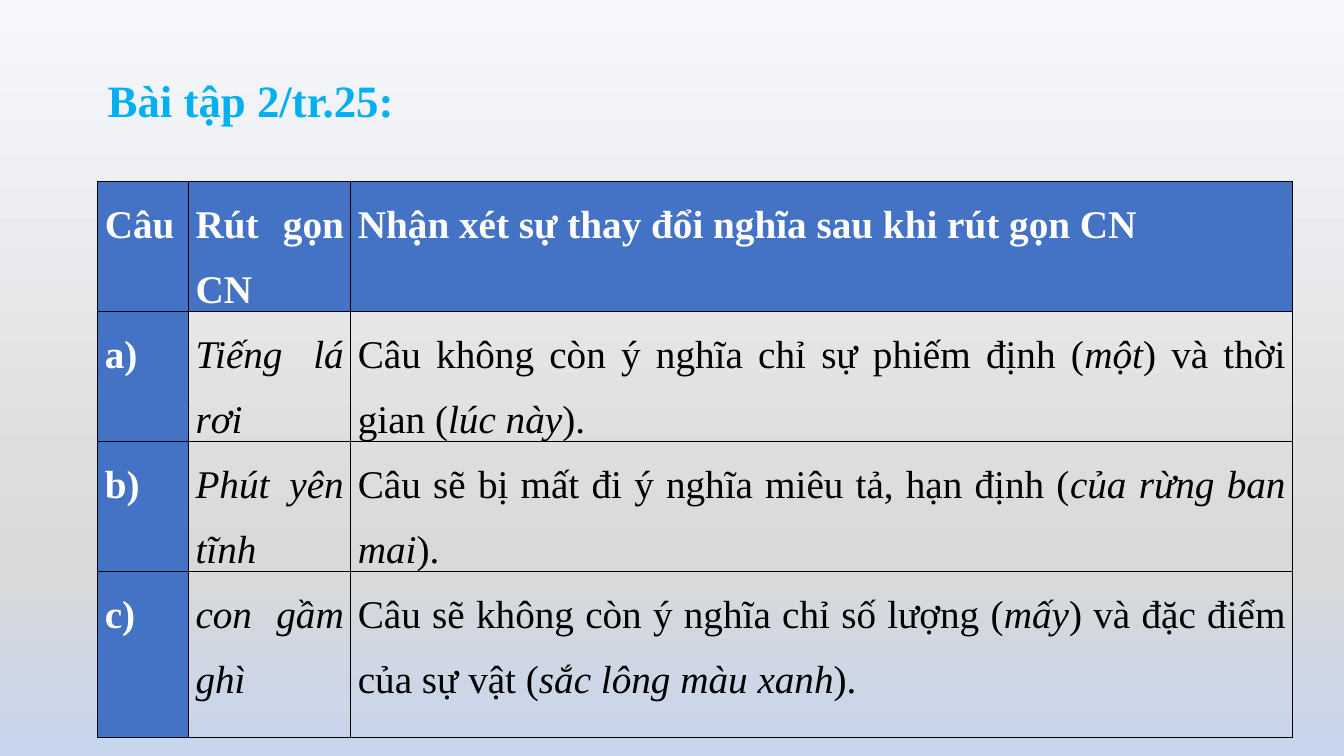
from copy import deepcopy

from pptx import Presentation
from pptx.dml.color import RGBColor
from pptx.enum.text import MSO_AUTO_SIZE, PP_ALIGN
from pptx.oxml.ns import qn
from pptx.oxml.xmlchemy import OxmlElement as make_element
from pptx.util import Inches, Pt

FONT = "Times New Roman"
COLORS = {
    "sky_top": "F6F8FC", "sky_middle": "D9D9D9", "sky_bottom": "C7D5ED",
    "heading": "00B0F0", "header": "4472C4", "light": "FFFFFF", "dark": "000000",
}
COLUMN_WIDTHS = [0.9, 1.61, 9.34]
ROW_HEIGHTS = [0.57, 1.13, 1.13, 1.64]

# Asterisks enclose the italic words
ANSWERS = [
    ["Câu", "Rút gọn CN", "Nhận xét sự thay đổi nghĩa sau khi rút gọn CN"],
    ["a)", "*Tiếng lá rơi*",
     "Câu không còn ý nghĩa chỉ sự phiếm định (*một*) và thời gian (*lúc này*)."],
    ["b)", "*Phút yên tĩnh*",
     "Câu sẽ bị mất đi ý nghĩa miêu tả, hạn định (*của rừng ban mai*)."],
    ["c)", "*con gầm ghì*",
     "Câu sẽ không còn ý nghĩa chỉ số lượng (*mấy*) và đặc điểm của sự vật "
     "(*sắc lông màu xanh*)."],
]


def rgb(name):
    return RGBColor.from_string(COLORS[name])


def write_text(frame, text, size, color, bold):
    paragraph = frame.paragraphs[0]
    paragraph.alignment = PP_ALIGN.JUSTIFY
    paragraph.line_spacing = 1.5
    for index, part in enumerate(text.split("*")):
        if part:
            run = paragraph.add_run()
            run.text = part
            run.font.name = FONT
            run.font.size = Pt(size)
            run.font.bold = bold
            run.font.italic = index % 2 == 1
            run.font.color.rgb = rgb(color)


def add_borders(cell):
    properties = cell._tc.get_or_add_tcPr()
    for position, side in enumerate(("a:lnL", "a:lnR", "a:lnT", "a:lnB")):
        line = make_element(side)
        line.set("w", str(Pt(1)))
        fill = make_element("a:solidFill")
        color = make_element("a:srgbClr")
        color.set("val", COLORS["dark"])
        fill.append(color)
        line.append(fill)
        properties.insert(position, line)


def paint_background(slide):
    fill = slide.background.fill
    fill.gradient()
    fill.gradient_angle = 270
    stop_list = next(slide.element.iter(qn("a:gsLst")))
    stop_list.insert(1, deepcopy(stop_list[0]))
    shades = [(0, "sky_top"), (0.74, "sky_middle"), (1, "sky_bottom")]
    for stop, (position, color) in zip(fill.gradient_stops, shades):
        stop.position = position
        stop.color.rgb = rgb(color)


def add_heading(slide, left, top, width, height):
    heading = slide.shapes.add_textbox(
        Inches(left), Inches(top), Inches(width), Inches(height))
    frame = heading.text_frame
    frame.word_wrap = True
    frame.auto_size = MSO_AUTO_SIZE.SHAPE_TO_FIT_TEXT
    write_text(frame, "Bài tập 2/tr.25:", 32, "heading", True)


def add_answer_table(slide, left, top, width, height):
    answers = slide.shapes.add_table(
        len(ANSWERS), len(COLUMN_WIDTHS),
        Inches(left), Inches(top), Inches(width), Inches(height)).table
    answers.horz_banding = False
    answers.first_col = True
    for column, column_width in zip(answers.columns, COLUMN_WIDTHS):
        column.width = Inches(column_width)
    for row, row_height in zip(answers.rows, ROW_HEIGHTS):
        row.height = Inches(row_height)

    for r, texts in enumerate(ANSWERS):
        for c, text in enumerate(texts):
            cell = answers.cell(r, c)
            is_header = r == 0 or c == 0
            cell.margin_left = cell.margin_right = Inches(0.07)
            cell.margin_top = cell.margin_bottom = 0
            if is_header:
                cell.fill.solid()
                cell.fill.fore_color.rgb = rgb("header")
            else:
                cell.fill.background()
            add_borders(cell)
            write_text(cell.text_frame, text, 28,
                       "light" if is_header else "dark", is_header)


def main():
    deck = Presentation()
    deck.slide_width, deck.slide_height = Inches(13.33), Inches(7.5)
    slide = deck.slides.add_slide(deck.slide_layouts[6])
    paint_background(slide)
    add_answer_table(slide, 0.97, 1.8, sum(COLUMN_WIDTHS), sum(ROW_HEIGHTS))
    add_heading(slide, 0.97, 0.41, 3.11, 0.91)
    deck.save("out.pptx")


if __name__ == "__main__":
    main()
